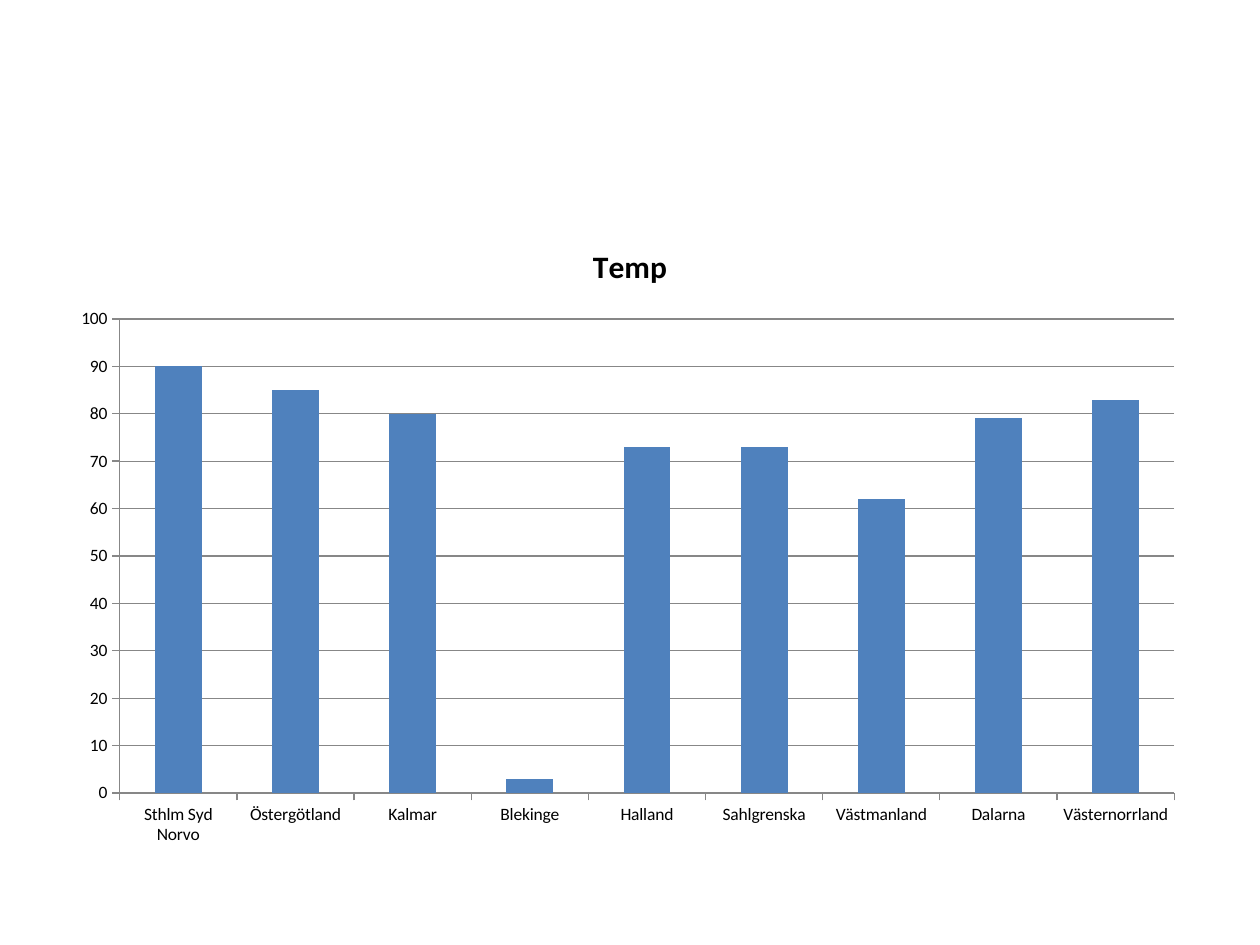
from dataclasses import dataclass

import pptx
import pptx.chart.data
import pptx.dml.color
import pptx.enum.chart
import pptx.oxml
import pptx.oxml.ns
import pptx.util
from pptx.util import Inches


@dataclass(frozen=True)
class Theme:
    font: str = "Calibri"
    text: str = "000000"
    bar: str = "4F81BD"
    line: str = "878787"
    label_size: float = 10
    title_size: float = 18
    line_width: float = 0.75


TEMPERATURES = {
    "Sthlm Syd Norvo": 90,
    "Östergötland": 85,
    "Kalmar": 80,
    "Blekinge": 3,
    "Halland": 73,
    "Sahlgrenska": 73,
    "Västmanland": 62,
    "Dalarna": 79,
    "Västernorrland": 83,
}


class SlideBuilder:
    def __init__(self, slide, theme):
        self.slide = slide
        self.theme = theme

    def style_font(self, font, size, bold=False):
        font.name = self.theme.font
        font.size = pptx.util.Pt(size)
        font.bold = bold
        font.color.rgb = pptx.dml.color.RGBColor.from_string(self.theme.text)

    def style_line(self, line):
        line.color.rgb = pptx.dml.color.RGBColor.from_string(self.theme.line)
        line.width = pptx.util.Pt(self.theme.line_width)

    def place_plot(self, chart, x, y, w, h):
        """Fix the inner plot area, in fractions of the chart."""
        plot_area = chart.plots[0]._element.getparent()
        for layout in plot_area.findall(pptx.oxml.ns.qn("c:layout")):
            plot_area.remove(layout)
        sizes = "".join(f'<c:{tag} val="{value}"/>'
                        for tag, value in zip("xywh", (x, y, w, h)))
        plot_area.insert(0, pptx.oxml.parse_xml(
            f'<c:layout {pptx.oxml.ns.nsdecls("c")}><c:manualLayout>'
            '<c:layoutTarget val="inner"/><c:xMode val="edge"/>'
            f'<c:yMode val="edge"/>{sizes}</c:manualLayout></c:layout>'))

    def column_chart(self, title, values, left, top, width, height):
        data = pptx.chart.data.CategoryChartData()
        data.categories = list(values)
        data.add_series("Series 1", list(values.values()))
        chart = self.slide.shapes.add_chart(
            pptx.enum.chart.XL_CHART_TYPE.COLUMN_CLUSTERED,
            Inches(left), Inches(top), Inches(width), Inches(height), data).chart
        self.style_font(chart.font, self.theme.label_size)
        chart.has_legend = False

        chart.has_title = True
        chart.chart_title.include_in_layout = True
        heading = chart.chart_title.text_frame.paragraphs[0]
        heading.text = title
        self.style_font(heading.runs[0].font, self.theme.title_size, bold=True)

        plot = chart.plots[0]
        plot.gap_width = 150
        plot.vary_by_categories = False
        fill = plot.series[0].format.fill
        fill.solid()
        fill.fore_color.rgb = pptx.dml.color.RGBColor.from_string(self.theme.bar)

        for axis in (chart.category_axis, chart.value_axis):
            axis.major_tick_mark = pptx.enum.chart.XL_TICK_MARK.OUTSIDE
            axis.minor_tick_mark = pptx.enum.chart.XL_TICK_MARK.NONE
            self.style_line(axis.format.line)
        value_axis = chart.value_axis
        value_axis.minimum_scale = 0
        value_axis.maximum_scale = 100
        value_axis.major_unit = 10
        value_axis.has_major_gridlines = True
        self.style_line(value_axis.major_gridlines.format.line)
        return chart


def main():
    presentation = pptx.Presentation()
    presentation.slide_width = Inches(10)
    presentation.slide_height = Inches(7.5)
    slide = presentation.slides.add_slide(presentation.slide_layouts[6])
    builder = SlideBuilder(slide, Theme())
    temperature_chart = builder.column_chart("Temp", TEMPERATURES, 0.5, 1.75, 9, 4.95)
    builder.place_plot(temperature_chart, 0.05, 0.16, 0.93, 0.77)
    presentation.save("out.pptx")


if __name__ == "__main__":
    main()
